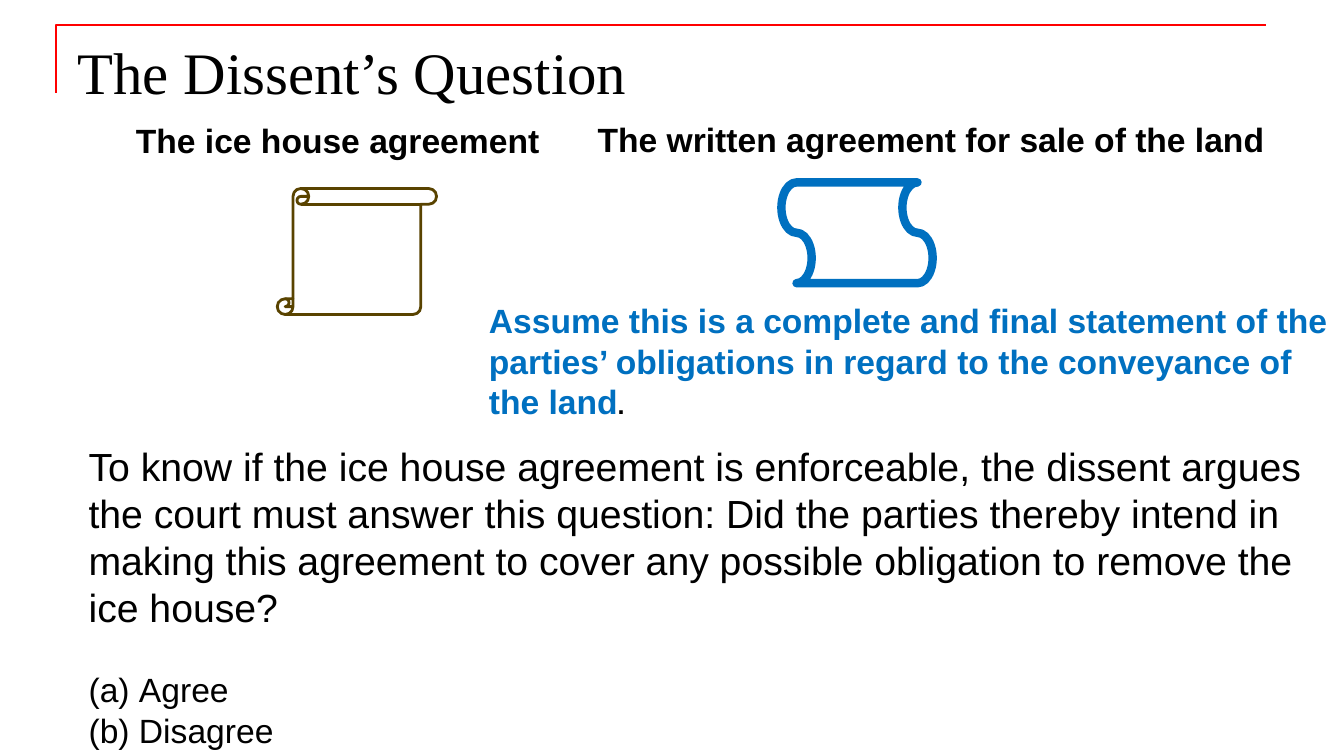
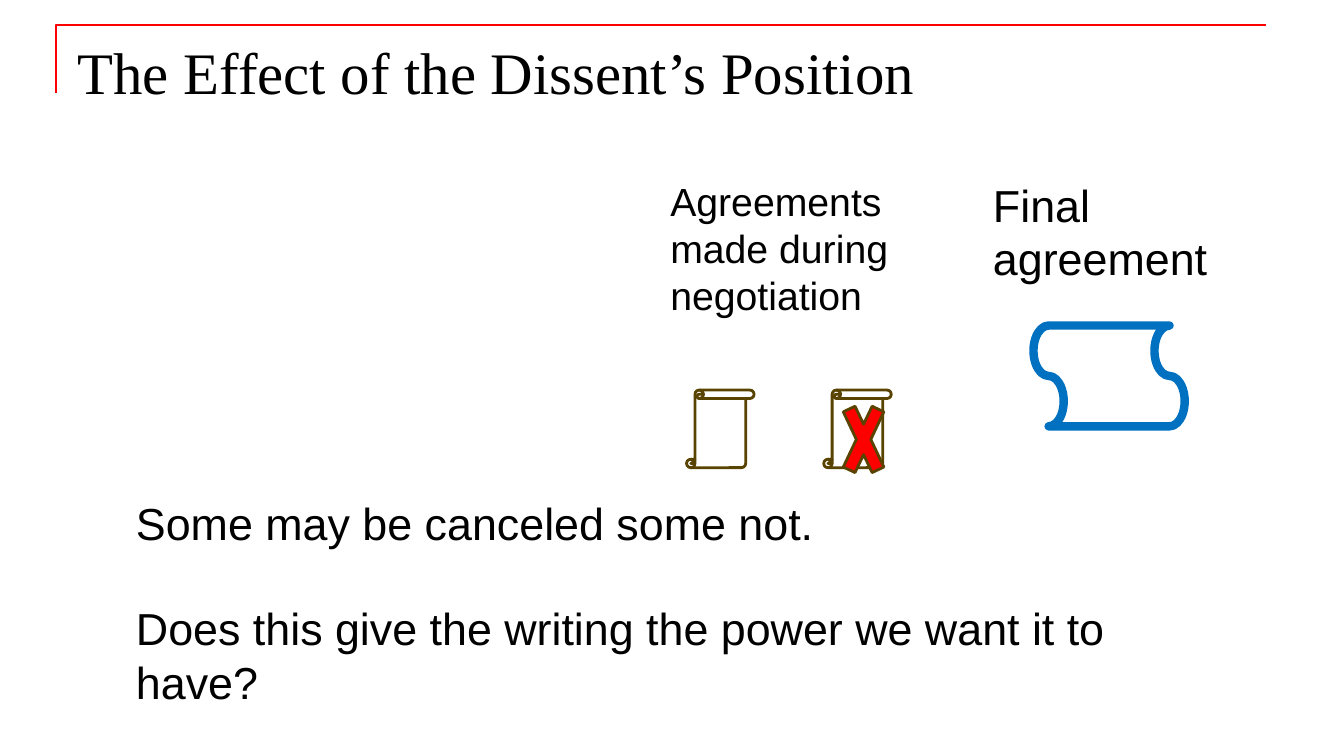
"""Builds two slides on the dissent's view of the ice house agreement."""
from lxml import etree
from pptx import Presentation, util as u
from pptx.dml.color import RGBColor
from pptx.enum import shapes, text
from pptx.oxml.ns import qn

BLACK, RED, BLUE, BROWN = "000000", "FF0000", "0070C0", "594300"
BODY_FONT, TITLE_FONT = "Arial", "Times New Roman"
TITLE_BOX = (0.67, 0.3, 12, 1.25)
CORNER = [(0.56, 0.92), (0.56, 0.25), (12.56, 0.25)]

SHAPE = shapes.MSO_SHAPE
STYLES = {
    "tape": dict(kind=SHAPE.FLOWCHART_PUNCHED_TAPE, line=BLUE, width=6, rotation=90),
    "scroll": dict(kind=SHAPE.VERTICAL_SCROLL, line=BROWN, width=2),
    "cross": dict(kind=SHAPE.MATH_MULTIPLY, line=BROWN, width=2, fill=RED),
}


def run(words, size, color=BLACK, bold=False):
    return dict(words=words, size=size, color=color, bold=bold)


def para(*runs, before=0, lettered=False):
    return dict(runs=runs, before=before, lettered=lettered)


SLIDES = [
    dict(
        title="The Dissent’s Question",
        drawings=[("tape", (8, 1.56, 1, 1.5)), ("scroll", (2.75, 1.87, 1.58, 1.25))],
        texts=[
            ((5.83, 1.13, 6.83, 0.5),
             [para(run("The written agreement for sale of the land", 24, bold=True))]),
            ((1.25, 1.14, 5.28, 0.5),
             [para(run("The ice house agreement", 24, bold=True))]),
            ((4.75, 2.93, 8.58, 1.62),
             [para(run("Assume this is a complete and final statement of the parties’ "
                       "obligations in regard to the conveyance of the land",
                       24, BLUE, True),
                   run(".", 18, bold=True))]),
            ((0.78, 4.34, 12.58, 3.5),
             [para(run("To know if the ice house agreement is enforceable, the dissent "
                       "argues the court must answer this question: Did the parties "
                       "thereby intend in making this agreement to cover any possible "
                       "obligation to remove the ice house?", 28)),
              para(run("Agree", 24), before=27.6, lettered=True),
              para(run("Disagree", 24), lettered=True)]),
        ],
    ),
    dict(
        title="The Effect of the Dissent’s Position",
        drawings=[("tape", (10.5, 2.98, 1, 1.5)),
                  ("scroll", (6.81, 3.87, 0.67, 0.77)),
                  ("scroll", (8.17, 3.87, 0.67, 0.77)),
                  ("cross", (8.29, 3.78, 0.55, 1.16))],
        texts=[
            ((9.75, 1.71, 3.22, 1.18), [para(run("Final agreement", 32))]),
            ((6.55, 1.71, 2.58, 1.51),
             [para(run("Agreements made during negotiation", 28))]),
            ((1.25, 4.87, 10.08, 2.26),
             [para(run("Some may be canceled some not.", 32)),
              para(run("Does this give the writing the power we want it to have?", 32),
                   before=36.8)]),
        ],
    ),
]


def rgb(value):
    return RGBColor.from_string(value)


def inches(values):
    return [u.Inches(value) for value in values]


def add_run(paragraph, words, size, color, bold, font=BODY_FONT):
    piece = paragraph.add_run()
    piece.text = words
    piece.font.name, piece.font.size, piece.font.bold = font, u.Pt(size), bold
    piece.font.color.rgb = rgb(color)


def style_shape(shape, line, width, fill=None):
    shape.shadow.inherit = False
    shape.line.color.rgb, shape.line.width = rgb(line), u.Pt(width)
    if fill:
        shape.fill.solid()
        shape.fill.fore_color.rgb = rgb(fill)
    else:
        shape.fill.background()


def add_corner(slide):
    start, *others = [inches(point) for point in CORNER]
    builder = slide.shapes.build_freeform(*start)
    builder.add_line_segments(others, close=False)
    style_shape(builder.convert_to_shape(), RED, 1.5)


def set_title(slide, words):
    title = slide.shapes.title
    title.left, title.top, title.width, title.height = inches(TITLE_BOX)
    frame = title.text_frame
    frame.auto_size = text.MSO_AUTO_SIZE.NONE
    frame.vertical_anchor = text.MSO_ANCHOR.TOP
    paragraph = frame.paragraphs[0]
    paragraph.alignment = text.PP_ALIGN.LEFT
    add_run(paragraph, words, 42, BLACK, False, TITLE_FONT)


def add_drawing(slide, style, box):
    options = dict(STYLES[style])
    shape = slide.shapes.add_shape(options.pop("kind"), *inches(box))
    shape.rotation = options.pop("rotation", 0)
    style_shape(shape, **options)


def letter(paragraph):
    properties = paragraph._p.get_or_add_pPr()
    properties.set("marL", str(u.Inches(0.5)))
    properties.set("indent", str(u.Inches(-0.5)))
    etree.SubElement(properties, qn("a:buAutoNum"), type="alphaLcParenBoth")


def add_text(slide, box, paragraphs):
    frame = slide.shapes.add_textbox(*inches(box)).text_frame
    frame.word_wrap = True
    for index, content in enumerate(paragraphs):
        paragraph = frame.add_paragraph() if index else frame.paragraphs[0]
        paragraph.space_before = u.Pt(content["before"])
        if content["lettered"]:
            letter(paragraph)
        for piece in content["runs"]:
            add_run(paragraph, **piece)


def main():
    presentation = Presentation()
    presentation.slide_width, presentation.slide_height = inches((13.33, 7.5))
    for content in SLIDES:
        slide = presentation.slides.add_slide(presentation.slide_layouts[5])
        add_corner(slide)
        set_title(slide, content["title"])
        for style, box in content["drawings"]:
            add_drawing(slide, style, box)
        for box, paragraphs in content["texts"]:
            add_text(slide, box, paragraphs)
    presentation.save("out.pptx")


if __name__ == "__main__":
    main()
